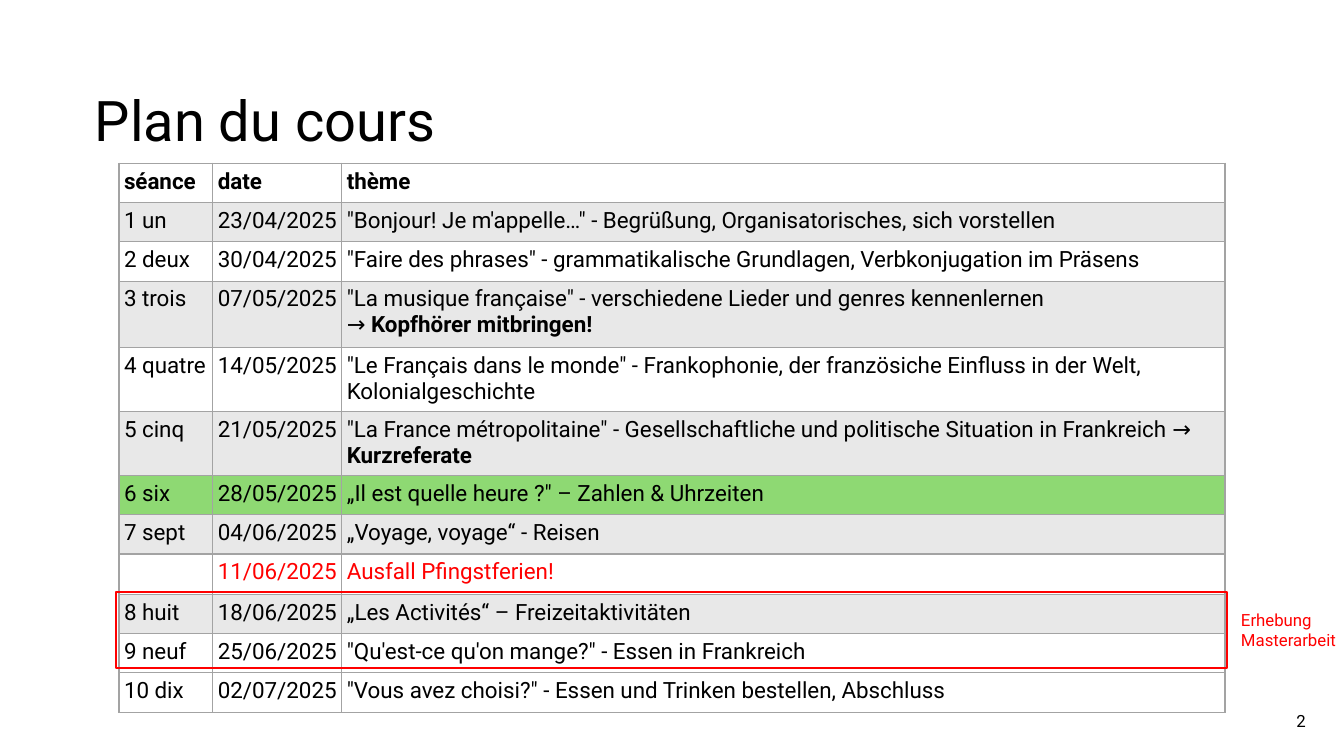
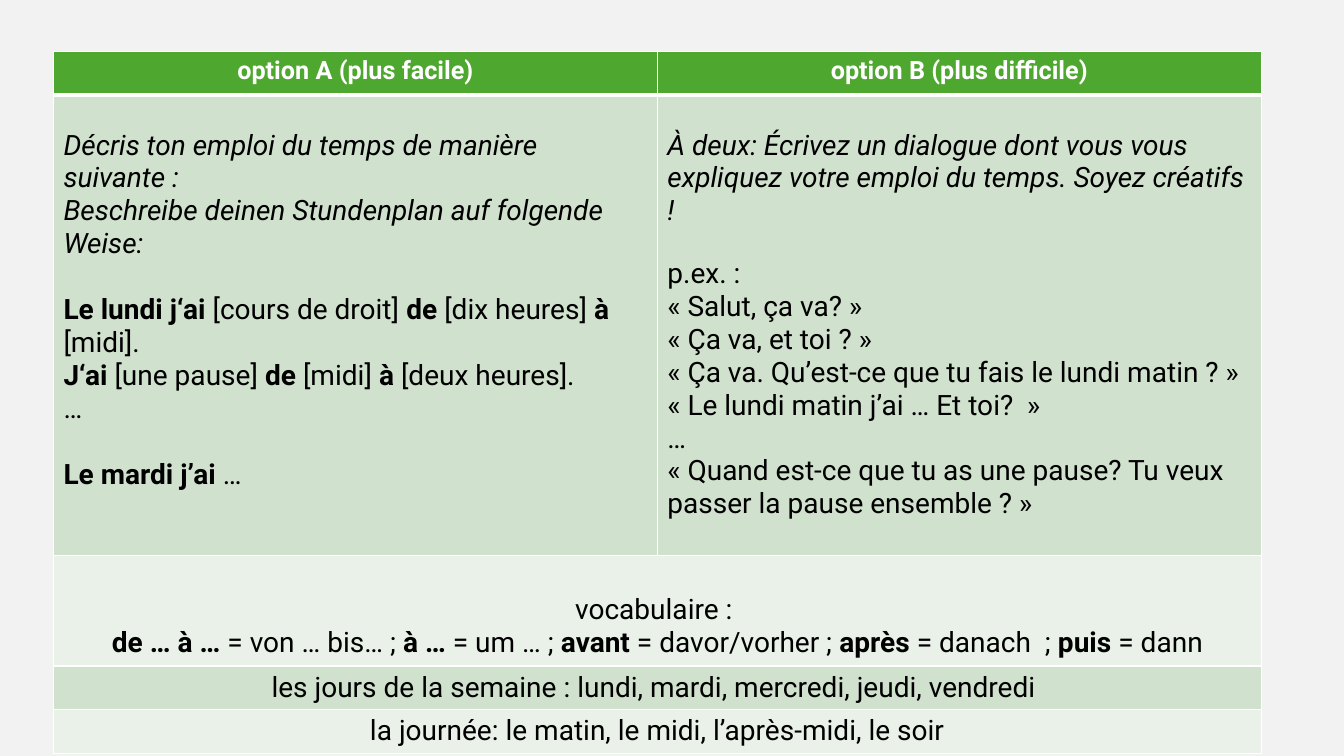
from lxml import etree
from pptx import Presentation
from pptx.dml.color import RGBColor
from pptx.enum import shapes, text
from pptx.oxml import ns
from pptx.util import Inches, Pt

FONT = "Roboto"
COLORS = {
    "black": "000000", "white": "FFFFFF", "red": "FF0000",
    "page": "F2F2F2", "grid": "A3A3A3", "band": "E8E8E8", "today": "8ED973",
    "header": "4EA72E", "sage": "D0E1CD", "mist": "E9F1E8",
}
LEFT, CENTER, RIGHT = text.PP_ALIGN.LEFT, text.PP_ALIGN.CENTER, text.PP_ALIGN.RIGHT

# Row fill, text colour, row height, then séance, date and thème; *…* is bold
SESSIONS = [
    ("white", "black", 0.39, "*séance*", "*date*", ["*thème*"]),
    ("band", "black", 0.39, "1 un", "23/04/2025",
     ["\"Bonjour! Je m'appelle…\" - Begrüßung, Organisatorisches, sich vorstellen"]),
    ("white", "black", 0.39, "2 deux", "30/04/2025",
     ["\"Faire des phrases\" - grammatikalische Grundlagen, Verbkonjugation im Präsens"]),
    ("band", "black", 0.66, "3 trois", "07/05/2025",
     ["\"La musique française\" - verschiedene Lieder und genres kennenlernen",
      "→ *Kopfhörer mitbringen!*"]),
    ("white", "black", 0.61, "4 quatre", "14/05/2025",
     ["\"Le Français dans le monde\" - Frankophonie, der französiche Einfluss "
      "in der Welt, Kolonialgeschichte"]),
    ("band", "black", 0.61, "5 cinq", "21/05/2025",
     ["\"La France métropolitaine\" - Gesellschaftliche und politische Situation "
      "in Frankreich → *Kurzreferate*"]),
    ("today", "black", 0.39, "6 six", "28/05/2025",
     ["„Il est quelle heure ?\" – Zahlen & Uhrzeiten"]),
    ("band", "black", 0.39, "7 sept", "04/06/2025", ["„Voyage, voyage“ - Reisen"]),
    ("white", "red", 0.39, "", "11/06/2025", ["Ausfall Pfingstferien!"]),
    ("band", "black", 0.39, "8 huit", "18/06/2025",
     ["„Les Activités“ – Freizeitaktivitäten"]),
    ("white", "black", 0.39, "9 neuf", "25/06/2025",
     ["\"Qu'est-ce qu'on mange?\" - Essen in Frankreich"]),
    ("white", "black", 0.39, "10 dix", "02/07/2025",
     ["\"Vous avez choisi?\" - Essen und Trinken bestellen, Abschluss"]),
]

# Each line: text, italic, space before in points
OPTION_A = [
    ("Décris ton emploi du temps de manière", True, 0),
    ("suivante :", True, 0),
    ("Beschreibe deinen Stundenplan auf folgende Weise:", True, 0),
    ("*Le lundi j‘ai *[cours de droit] *de* [dix heures] *à* [midi].", False, 23.4),
    ("*J‘ai *[une pause] *de* [midi]* à *[deux heures].", False, 0),
    ("…", False, 0),
    ("*Le mardi j’ai *…", False, 23.4),
]
OPTION_B = [
    ("À deux: Écrivez un dialogue dont vous vous expliquez votre emploi du temps. "
     "Soyez créatifs !", True, 0),
    ("p.ex. :", False, 21.1),
    ("« Salut, ça va? »", False, 0),
    ("« Ça va, et toi ? »", False, 0),
    ("« Ça va. Qu’est-ce que tu fais le lundi matin ? »", False, 0),
    ("« Le lundi matin j’ai … Et toi?  »", False, 0),
    ("…", False, 0),
    ("« Quand est-ce que tu as une pause? Tu veux passer la pause ensemble ? »",
     False, 0),
]
VOCABULARY = [
    ("vocabulaire : ", False, 0),
    ("*de … à … *= von … bis… ;* à … *= um … ; *avant *= davor/vorher ;"
     "* après *= danach  ; *puis *= dann", False, 0),
]
DAYS = [("les jours de la semaine : lundi, mardi, mercredi, jeudi, vendredi ", False, 0)]
DAYTIMES = [("la journée: le matin, le midi, l’après-midi, le soir", False, 0)]


def rgb(name):
    return RGBColor.from_string(COLORS[name])


def paint(fill, name):
    fill.solid()
    fill.fore_color.rgb = rgb(name)


def write(frame, lines, size, color="black", align=LEFT):
    """Fill a text frame with (text, italic, space before) lines; *…* is bold."""
    for index, (line, italic, gap) in enumerate(lines):
        para = frame.paragraphs[0] if index == 0 else frame.add_paragraph()
        para.alignment = align
        para.space_before = Pt(gap)
        for part, words in enumerate(line.split("*")):
            if words:
                run = para.add_run()
                run.text = words
                font = run.font
                font.name, font.size = FONT, Pt(size)
                font.bold, font.italic = part % 2 == 1, italic
                font.color.rgb = rgb(color)


def plain(*lines):
    return [(line, False, 0) for line in lines]


def style_cell(cell, fill, border, top=1, bottom=1):
    """Give a cell its four borders, then its fill."""
    props = cell._tc.get_or_add_tcPr()
    for side, width in (("L", 1), ("R", 1), ("T", top), ("B", bottom)):
        line = etree.SubElement(props, ns.qn("a:ln" + side), w=str(Pt(width)))
        solid = etree.SubElement(line, ns.qn("a:solidFill"))
        etree.SubElement(solid, ns.qn("a:srgbClr"), val=COLORS[border])
    paint(cell.fill, fill)


def add_grid(slide, left, top, widths, heights):
    table = slide.shapes.add_table(
        len(heights), len(widths), Inches(left), Inches(top),
        Inches(sum(widths)), Inches(sum(heights))).table
    table.first_row = table.horz_banding = False
    for column, width in zip(table.columns, widths):
        column.width = Inches(width)
    for row, height in zip(table.rows, heights):
        row.height = Inches(height)
    return table


def add_label(slide, left, top, width, height, words, color="black", align=LEFT):
    frame = slide.shapes.add_textbox(
        Inches(left), Inches(top), Inches(width), Inches(height)).text_frame
    frame.word_wrap = True
    write(frame, plain(words), 12, color, align)
    return frame


def add_title(slide, left, top, width, height, words):
    title = slide.shapes.title
    title.left, title.top = Inches(left), Inches(top)
    title.width, title.height = Inches(width), Inches(height)
    title.text_frame.vertical_anchor = text.MSO_ANCHOR.MIDDLE
    write(title.text_frame, plain(words), 40)
    title.text_frame.paragraphs[0].line_spacing = 0.9


def add_schedule(slide, left, top):
    table = add_grid(slide, left, top, (0.93, 1.28, 8.76),
                     [session[2] for session in SESSIONS])
    for row, (fill, color, _, number, date, theme) in zip(table.rows, SESSIONS):
        for cell, lines in zip(row.cells, ([number], [date], theme)):
            cell.margin_left = cell.margin_right = Inches(0.05)
            cell.margin_top = cell.margin_bottom = Inches(0.05)
            style_cell(cell, fill, "grid")
            write(cell.text_frame, plain(*lines), 16, color)


def add_survey_mark(slide, left, top, width, height):
    """Frame the surveyed sessions and label them on the right."""
    frame = slide.shapes.add_shape(
        shapes.MSO_SHAPE.RECTANGLE,
        Inches(left), Inches(top), Inches(width), Inches(height))
    frame.shadow.inherit = False
    frame.fill.background()
    frame.line.color.rgb = rgb("red")
    frame.line.width = Pt(1.5)
    label = add_label(slide, left + width + 0.04, top + 0.13, 1.12, 0.5,
                      "Erhebung Masterarbeit", "red")
    label.margin_right = 0


def add_options(slide, left, top, width):
    table = add_grid(slide, left, top, [width / 2] * 2,
                     (0.43, 4.57, 1.09, 0.43, 0.43))
    options = (("option A (plus facile)", OPTION_A),
               ("option B (plus difficile)", OPTION_B))
    for column, (heading, task) in enumerate(options):
        head, body = table.cell(0, column), table.cell(1, column)
        style_cell(head, "header", "white", bottom=3)
        write(head.text_frame, plain(f"*{heading}*"), 18, "white", CENTER)
        style_cell(body, "sage", "white", top=3)
        body.margin_top = Inches(0.34)
        write(body.text_frame, task, 20)

    notes = ((VOCABULARY, "mist", 0.38), (DAYS, "sage", 0.05), (DAYTIMES, "mist", 0.05))
    for row, (lines, fill, inset) in enumerate(notes, start=2):
        note, covered = table.cell(row, 0), table.cell(row, 1)
        note.merge(covered)
        for cell in (note, covered):
            style_cell(cell, fill, "white")
        note.margin_top = Inches(inset)
        write(note.text_frame, lines, 20, align=CENTER)


def add_slide(deck, layout, background):
    slide = deck.slides.add_slide(deck.slide_layouts[layout])
    paint(slide.background.fill, background)
    return slide


def build_plan(deck):
    slide = add_slide(deck, 5, "white")
    add_title(slide, 0.84, 0.59, 11.46, 1.27, "Plan du cours")
    number = add_label(slide, 9.55, 6.95, 3.5, 0.4, "2", align=RIGHT)
    number.vertical_anchor = text.MSO_ANCHOR.MIDDLE
    number.paragraphs[0].space_after = Pt(6)
    add_schedule(slide, 1.18, 1.62)
    add_survey_mark(slide, 1.15, 5.87, 11.02, 0.76)


def build_exercise(deck):
    slide = add_slide(deck, 6, "page")
    add_options(slide, 0.53, 0.51, 11.98)


def main():
    deck = Presentation()
    deck.slide_width, deck.slide_height = Inches(13.33), Inches(7.5)
    build_plan(deck)
    build_exercise(deck)
    deck.save("out.pptx")


if __name__ == "__main__":
    main()
